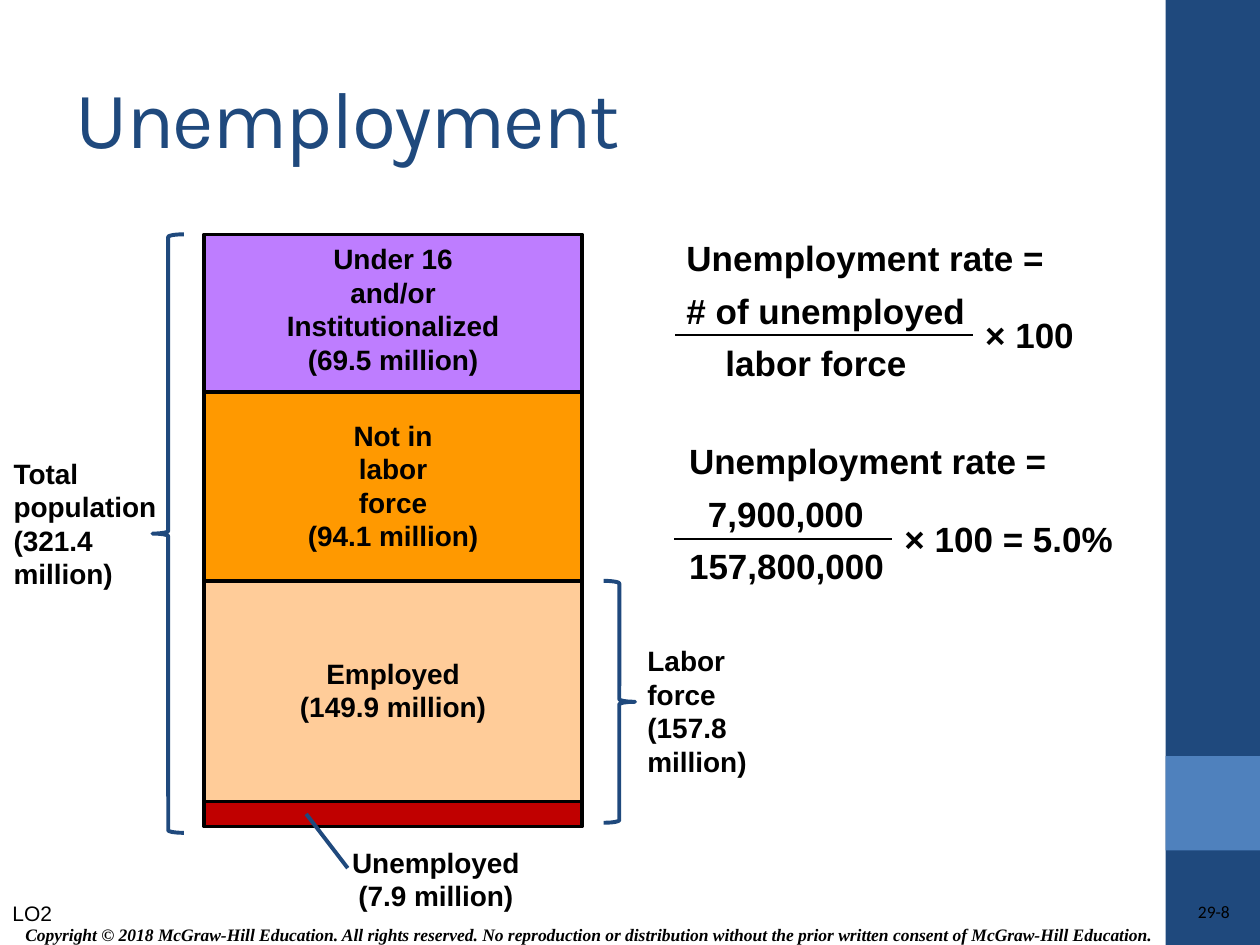
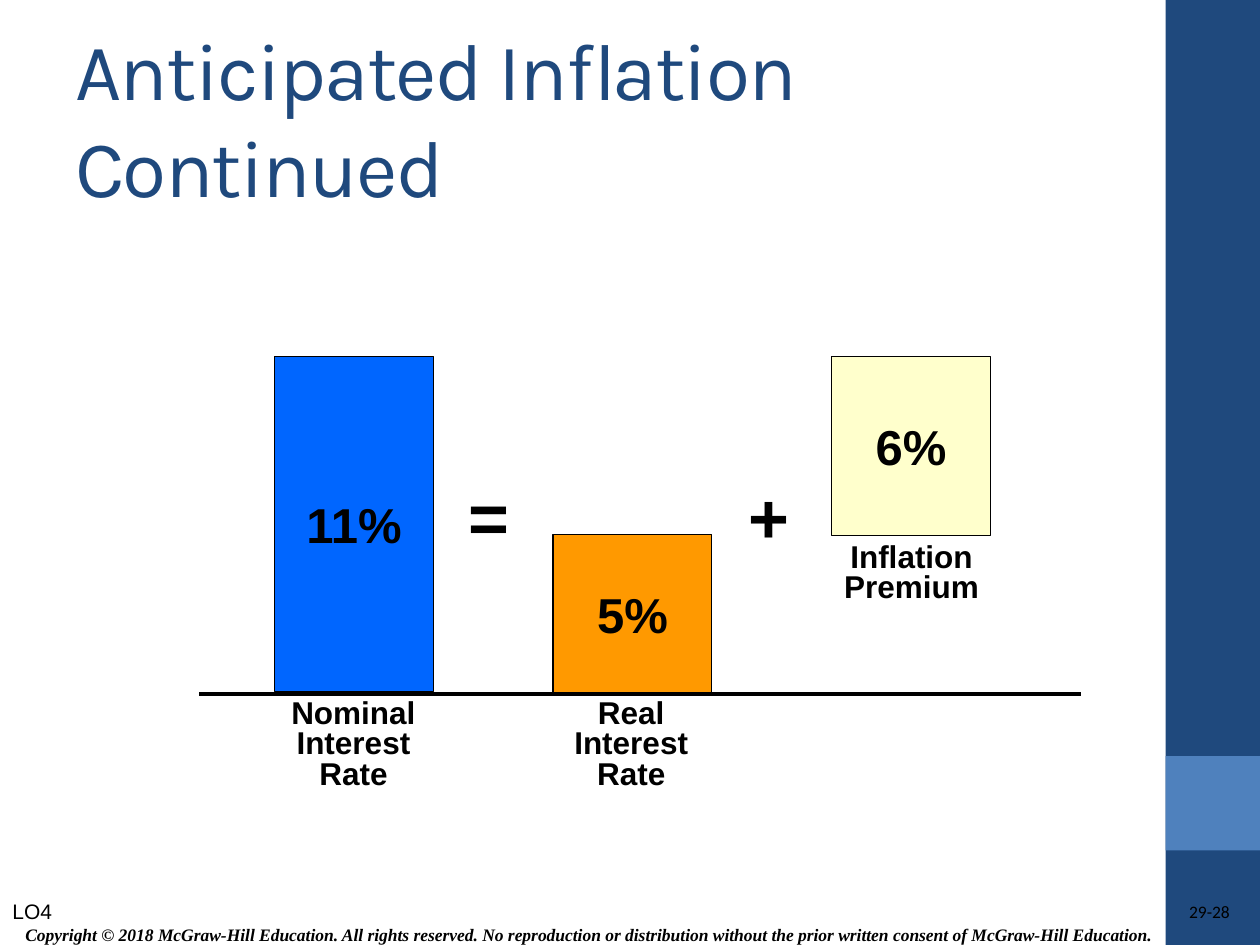
from dataclasses import dataclass

from lxml import etree
from pptx import Presentation
from pptx.dml.color import RGBColor
from pptx.enum.shapes import MSO_CONNECTOR as CONN, MSO_SHAPE as SHAPE
from pptx.enum.text import MSO_ANCHOR as ANCHOR, PP_ALIGN as ALIGN
from pptx.oxml.ns import qn
from pptx.util import Inches, Pt


@dataclass(frozen=True)
class Theme:
    navy: str = "1F497D"
    blue: str = "4F81BD"
    black: str = "000000"
    purple: str = "BE7DFF"
    orange: str = "FF9900"
    peach: str = "FFCC99"
    red: str = "C00000"
    bright_blue: str = "0066FF"
    cream: str = "FFFFCC"
    body_font: str = "Arial"
    title_font: str = "Karla"
    number_font: str = "Calibri"
    copyright_font: str = "Times New Roman"
    title: int = 46
    operator: int = 40
    value: int = 28
    formula: int = 20
    caption: int = 18
    label: int = 16
    objective: int = 12
    footer: int = 10


COPYRIGHT = ("Copyright © 2018 McGraw-Hill Education. All rights reserved. "
             "No reproduction or distribution without the prior written "
             "consent of McGraw-Hill Education.")


class Deck:
    def __init__(self, theme):
        self.theme = theme
        self.prs = Presentation()
        self.prs.slide_width = Inches(10)
        self.prs.slide_height = Inches(7.5)
        self.s = None

    def slide(self, title, number, objective, objective_top):
        t = self.theme
        self.s = self.prs.slides.add_slide(self.prs.slide_layouts[6])
        self.shape((9.25, 0, 0.75, 7.5), fill=t.navy)
        self.shape((9.25, 6, 0.75, 0.75), fill=t.blue)
        self.text((0.06, 7.28, 9.22, 0.28), [COPYRIGHT], t.footer,
                  font=t.copyright_font, italic=True, align=ALIGN.CENTER,
                  anchor=ANCHOR.MIDDLE)
        self.text((7.81, 7.15, 1.95, 0.2), [number], t.footer,
                  font=t.number_font, bold=False, align=ALIGN.RIGHT,
                  spacing=1.02, inset=0)
        tf = self.text((0.5, 0.3, 8.33, 1.25), [title], t.title,
                       font=t.title_font, color=t.navy, bold=False,
                       anchor=ANCHOR.MIDDLE)
        tf.paragraphs[0].runs[0]._r.get_or_add_rPr().set("spc", "-100")
        self.text((0, objective_top, 0.92, 0.3), [objective], t.objective,
                  bold=False)

    def shape(self, box, kind=SHAPE.RECTANGLE, fill=None, line=None, width=1):
        sp = self.s.shapes.add_shape(kind, *map(Inches, box))
        sp.shadow.inherit = False
        if fill:
            sp.fill.solid()
            sp.fill.fore_color.rgb = RGBColor.from_string(fill)
        else:
            sp.fill.background()
        if line:
            sp.line.color.rgb = RGBColor.from_string(line)
            sp.line.width = Pt(width)
        else:
            sp.line.fill.background()
        return sp

    def text(self, box, lines, size, inset=None, **style):
        tf = self.s.shapes.add_textbox(*map(Inches, box)).text_frame
        if inset is not None:
            tf.margin_left = tf.margin_right = Inches(inset)
            tf.margin_top = tf.margin_bottom = Inches(inset)
        return self.fill_text(tf, lines, size, **style)

    def fill_text(self, tf, lines, size, font=None, color=None, bold=True,
                  italic=False, align=ALIGN.LEFT, anchor=ANCHOR.TOP,
                  wrap=True, spacing=None, gap=0, indents=()):
        tf.word_wrap = wrap
        tf.vertical_anchor = anchor
        for i, line in enumerate(lines):
            p = tf.add_paragraph() if i else tf.paragraphs[0]
            p.add_run().text = line
            p.alignment = align
            if spacing:
                p.line_spacing = spacing
            if i and gap:
                p.space_before = Pt(gap)
            if indents:
                p._p.get_or_add_pPr().set("marL", str(Inches(indents[i])))
            p.font.name = font or self.theme.body_font
            p.font.size = Pt(size)
            p.font.bold = bold
            p.font.italic = italic
            p.font.color.rgb = RGBColor.from_string(color or self.theme.black)
        return tf

    def line(self, start, end, color, width):
        c = self.s.shapes.add_connector(CONN.STRAIGHT,
                                        *map(Inches, start + end))
        c.line.color.rgb = RGBColor.from_string(color)
        c.line.width = Pt(width)
        etree.SubElement(c._element.spPr, qn("a:effectLst"))

    def formula(self, box, lines, indents, bar, result):
        t = self.theme
        left, right, y = bar
        self.text(box, lines, t.formula, gap=6, indents=indents)
        self.line((left, y), (right, y), t.black, 1)
        self.text((right, y - 0.22, 1.98, 0.44), [result], t.formula)

    def bar(self, left, top, height, fill, value):
        sp = self.shape((left, top, 1.26, height), fill=fill,
                        line=self.theme.black, width=0.75)
        self.fill_text(sp.text_frame, [value], self.theme.value,
                       align=ALIGN.CENTER, anchor=ANCHOR.MIDDLE, wrap=False)


def unemployment(deck):
    t = deck.theme
    deck.slide("Unemployment", "29-8", "LO2", 7.1)

    top = 1.86
    for height, fill in ((1.25, t.purple), (1.5, t.orange),
                         (1.75, t.peach), (0.2, t.red)):
        deck.shape((1.62, top, 3, height), fill=fill, line=t.black, width=2)
        top += height

    for left, top, lines in (
        (2.12, 1.87, ["Under 16", "and/or Institutionalized (69.5 million)"]),
        (2.12, 3.27, ["Not in", "labor", "force", "(94.1 million)"]),
        (2.12, 5.16, ["Employed", "(149.9 million)"]),
        (2.46, 6.66, ["Unemployed", "(7.9 million)"]),
    ):
        deck.text((left, top, 2, 0.64), lines, t.label, align=ALIGN.CENTER)

    deck.line((2.76, 6.89), (2.43, 6.46), t.navy, 2.25)
    for kind, box in ((SHAPE.LEFT_BRACE, (1.21, 1.86, 0.25, 4.75)),
                      (SHAPE.RIGHT_BRACE, (4.79, 4.61, 0.25, 1.92))):
        deck.shape(box, kind, line=t.navy, width=2.25)
    deck.text((0.01, 3.57, 1.38, 1.18),
              ["Total population (321.4 million)"], t.label)
    deck.text((5.04, 5.06, 1.25, 1.18),
              ["Labor force (157.8 million)"], t.label)

    deck.formula((5.35, 1.83, 3.36, 1.27),
                 ["Unemployment rate =", "# of unemployed", "labor force"],
                 (0, 0, 0.31), (5.36, 7.72, 2.66), "× 100")
    deck.formula((5.37, 3.44, 3.58, 1.28),
                 ["Unemployment rate =", "7,900,000", "157,800,000"],
                 (0, 0.15, 0), (5.35, 7.08, 4.28), "× 100 = 5.0%")


def anticipated_inflation(deck):
    t = deck.theme
    deck.slide("Anticipated Inflation Continued", "29-28", "LO4", 7.08)

    for box, lines in (
        ((2.21, 5.51, 1.19, 0.82), ["Nominal", "Interest", "Rate"]),
        ((4.46, 5.51, 1.1, 0.82), ["Real", "Interest", "Rate"]),
        ((6.6, 4.27, 1.27, 0.58), ["Inflation", "Premium"]),
    ):
        deck.text(box, lines, t.caption, align=ALIGN.CENTER, wrap=False,
                  spacing=0.8)

    deck.bar(2.18, 2.83, 2.66, t.bright_blue, "11%")
    deck.bar(4.39, 4.24, 1.26, t.orange, "5%")
    deck.bar(6.6, 2.83, 1.42, t.cream, "6%")
    deck.line((1.58, 5.51), (8.58, 5.51), t.black, 2.25)
    for left, sign in ((3.62, "="), (5.84, "+")):
        deck.text((left, 3.71, 0.53, 0.77), [sign], t.operator, wrap=False)


def main():
    deck = Deck(Theme())
    unemployment(deck)
    anticipated_inflation(deck)
    deck.prs.save("out.pptx")


if __name__ == "__main__":
    main()
